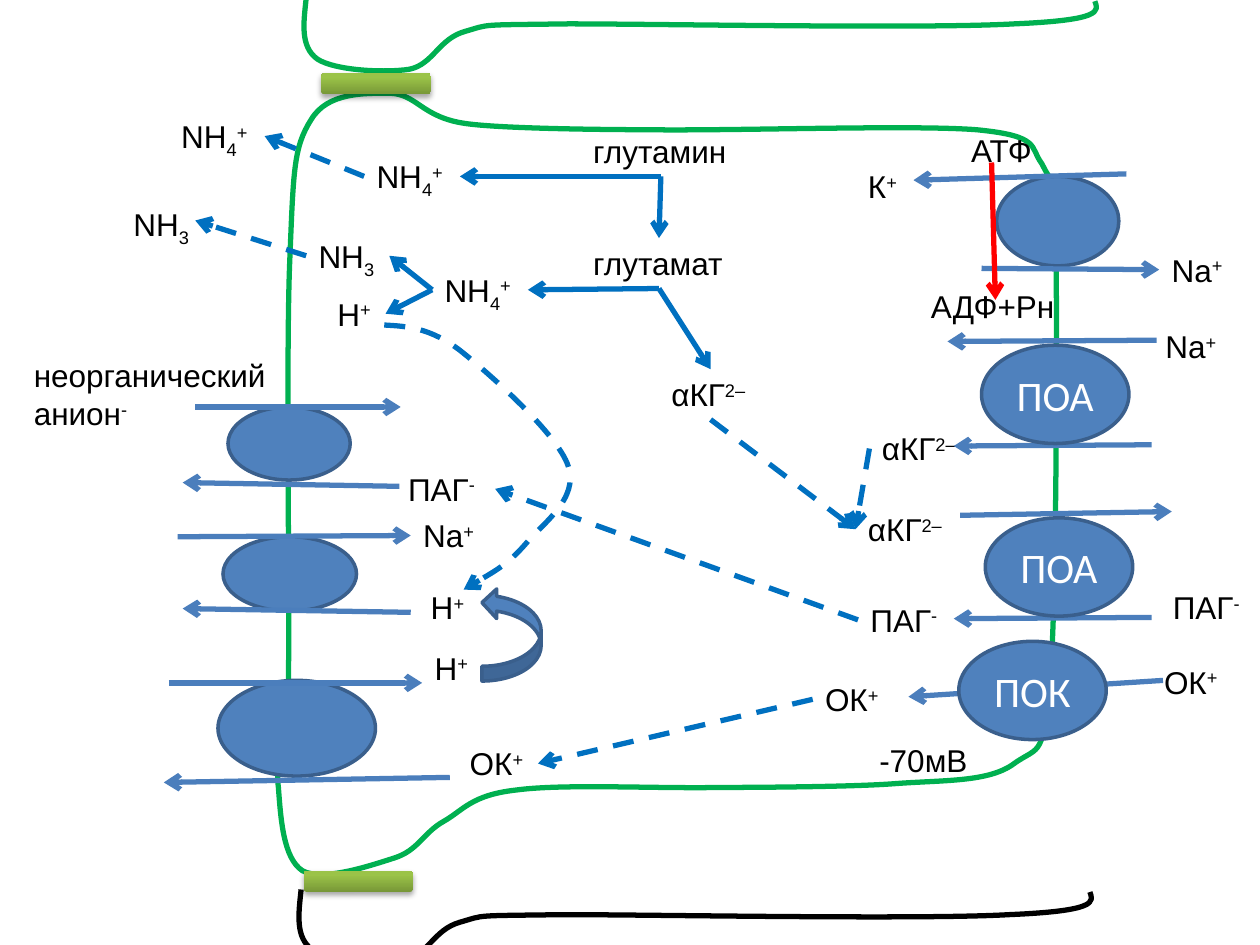
"""Slide: ion and acid transport through a tubule cell."""
from typing import NamedTuple, Optional

from lxml.etree import SubElement
from pptx import Presentation
from pptx.dml.color import RGBColor
from pptx.enum.dml import MSO_LINE
from pptx.enum.shapes import MSO_CONNECTOR, MSO_SHAPE
from pptx.enum.text import MSO_ANCHOR, MSO_AUTO_SIZE, PP_ALIGN
from pptx.oxml.ns import qn
from pptx.util import Pt

PX = 9144
BLACK = RGBColor(0x00, 0x00, 0x00)
WHITE = RGBColor(0xFF, 0xFF, 0xFF)
GREEN = RGBColor(0x00, 0xB0, 0x50)
RED = RGBColor(0xFF, 0x00, 0x00)
BLUE = RGBColor(0x00, 0x70, 0xC0)
FLOW = RGBColor(0x4B, 0x7E, 0xBC)
BODY = RGBColor(0x4F, 0x81, 0xBD)
EDGE = RGBColor(0x3A, 0x5F, 0x8C)
OLIVE = RGBColor(0x77, 0x97, 0x37)
LIME = RGBColor(0x9B, 0xC3, 0x48)
BASELINE = {"^": "30000", "_": "-25000"}


class Label(NamedTuple):
    text: str
    x: int
    y: int
    w: int
    h: int = 40
    wrap: bool = False


class Arrow(NamedTuple):
    x1: int
    y1: int
    x2: int
    y2: int
    color: RGBColor = FLOW
    dash: bool = False


class Carrier(NamedTuple):
    x: int
    y: int
    w: int
    h: int
    text: str = ""


class Curve(NamedTuple):
    points: list
    color: RGBColor = GREEN
    closed: bool = False
    arrow: bool = False


CELL = [(229, 537), (230, 468), (227, 282), (230, 208), (233, 135), (233, 117), (247, 95),
        (260, 73), (290, 74), (310, 74), (331, 75), (335, 93), (369, 98), (403, 103),
        (514, 103), (514, 103), (582, 104), (723, 99), (775, 103), (827, 108), (817, 117),
        (827, 130), (845, 167), (837, 113), (838, 180), (839, 247), (839, 462), (834, 533),
        (828, 604), (826, 591), (805, 606), (785, 621), (749, 619), (710, 622), (671, 625),
        (571, 625), (571, 625), (521, 626), (447, 622), (410, 627), (374, 631), (368, 643),
        (352, 652), (336, 661), (332, 675), (313, 681), (294, 687), (256, 700), (240, 691),
        (225, 681), (223, 651), (221, 625), (218, 599), (227, 607), (229, 537)]
NEIGHBOUR = [(243, -1), (241, 18), (238, 37), (252, 47), (266, 56), (305, 58), (325, 55),
             (344, 51), (348, 31), (369, 25), (390, 19), (378, 20), (451, 19), (523, 19),
             (735, 23), (805, 19), (875, 16), (872, 9), (869, 1)]
LOWER_NEIGHBOUR = [(x - 4, y + 707) for x, y in NEIGHBOUR]
PROTON_PATH = [(305, 258), (323, 259), (341, 260), (365, 278), (389, 297), (443, 345),
               (451, 370), (460, 396), (430, 416), (417, 432), (403, 448), (385, 458), (368, 468)]
CURVES = [Curve(CELL, closed=True), Curve(NEIGHBOUR), Curve(LOWER_NEIGHBOUR, BLACK)]
JUNCTIONS = [(255, 58), (241, 691)]
CARRIERS = [Carrier(791, 140, 97, 71), Carrier(177, 426, 106, 59),
            Carrier(173, 540, 125, 76), Carrier(181, 323, 97, 58)]
NAMED_CARRIERS = [Carrier(761, 509, 117, 78, "ПОК"), Carrier(782, 411, 117, 78, "ПОА"),
                  Carrier(779, 274, 117, 78, "ПОА")]
LABELS = [
    Label("Na|^+", 920, 194, 62), Label("К|^+", 679, 128, 45), Label("АТФ", 761, 99, 69),
    Label("АДФ+Рн", 729, 223, 119), Label("неорганический\nанион|^-", 17, 278, 217, 71),
    Label("Н|^+", 335, 510, 48), Label("Na|^+", 326, 405, 90, wrap=True),
    Label("NН|_4|^+", 289, 120, 76), Label("глутамин", 461, 100, 127),
    Label("ПАГ|^-", 921, 462, 79, wrap=True), Label("αКГ|^2–", 679, 400, 82),
    Label("ОК|^+", 914, 521, 64), Label("-70мВ", 688, 583, 91), Label("αКГ|^2–", 690, 336, 82),
    Label("Na|^+", 915, 255, 62), Label("ОК|^+", 645, 535, 64), Label("ОК|^+", 363, 586, 64),
    Label("Н|^+", 332, 462, 48), Label("ПАГ|^-", 681, 472, 79, wrap=True),
    Label("ПАГ|^-", 314, 368, 79, wrap=True), Label("глутамат", 461, 189, 124),
    Label("NН|_4|^+", 134, 88, 76), Label("αКГ|^2–", 523, 293, 82),
    Label("NН|_4|^+", 343, 210, 76), Label("NН|_3", 243, 183, 66),
    Label("Н|^+", 258, 229, 48), Label("NН|_3", 96, 158, 66)]
ARROWS = [
    Arrow(894, 138, 725, 143), Arrow(779, 213, 920, 214), Arrow(787, 129, 790, 238, RED),
    Arrow(326, 486, 145, 483), Arrow(141, 426, 328, 426), Arrow(357, 617, 130, 621),
    Arrow(134, 542, 335, 542), Arrow(317, 386, 145, 383), Arrow(155, 323, 318, 323),
    Arrow(914, 490, 757, 491), Arrow(762, 409, 930, 406), Arrow(923, 540, 721, 553),
    Arrow(914, 353, 757, 354), Arrow(918, 270, 752, 271),
    Arrow(524, 140, 523, 189, BLUE), Arrow(524, 140, 364, 140, BLUE),
    Arrow(523, 230, 564, 293, BLUE), Arrow(523, 230, 419, 230, BLUE),
    Arrow(343, 230, 309, 203, BLUE), Arrow(343, 230, 306, 250, BLUE),
    Arrow(690, 356, 679, 420, BLUE, True), Arrow(645, 555, 428, 606, BLUE, True),
    Arrow(681, 492, 393, 388, BLUE, True), Arrow(289, 140, 210, 108, BLUE, True),
    Arrow(564, 334, 679, 420, BLUE, True), Arrow(243, 203, 155, 175, BLUE, True)]


def write(tf, text: str, *, font="Arial", size=18, color=BLACK, align=PP_ALIGN.LEFT) -> None:
    """Write lines of runs split by |, where ^ raises and _ lowers a run."""
    for i, line in enumerate(text.split("\n")):
        p = tf.add_paragraph() if i else tf.paragraphs[0]
        p.alignment = align
        for part in line.split("|"):
            r = p.add_run()
            r.text = part.lstrip("^_")
            r.font.name, r.font.size, r.font.color.rgb = font, Pt(size), color
            if part[0] in BASELINE:
                r.font._element.set("baseline", BASELINE[part[0]])


def style_line(sp, color: RGBColor, dash=False, arrow=False) -> None:
    """Format a three-point stroke."""
    sp.line.color.rgb, sp.line.width = color, Pt(3)
    if dash:
        sp.line.dash_style = MSO_LINE.DASH
    if arrow:
        ln = sp.element.spPr.find(qn("a:ln"))
        SubElement(ln, qn("a:tailEnd"), type="arrow")


def draw_curve(s, curve: Curve) -> None:
    """Draw a chain of cubic curves given as a start and point triples."""
    anchors = curve.points[::3]
    builder = s.shapes.build_freeform(*anchors[0], scale=PX)
    builder.add_line_segments(anchors[1:], close=curve.closed)
    sp = builder.convert_to_shape()
    left, top = (min(axis) for axis in zip(*anchors))
    segments = list(sp.element.iter(qn("a:lnTo")))
    for i, segment in enumerate(segments[:len(anchors) - 1]):
        path = segment.getparent()
        cubic = SubElement(path, qn("a:cubicBezTo"))
        for x, y in curve.points[3 * i + 1:3 * i + 4]:
            SubElement(cubic, qn("a:pt"), x=str(x - left), y=str(y - top))
        path.replace(segment, cubic)
    sp.shadow.inherit = False
    sp.fill.background()
    style_line(sp, curve.color, curve.arrow, curve.arrow)


def draw_junction(s, x: int, y: int) -> None:
    """Draw a tight junction bar with a soft shadow."""
    sp = s.shapes.add_shape(MSO_SHAPE.ROUNDED_RECTANGLE, x * PX, y * PX, 87 * PX, 17 * PX)
    sp.fill.gradient()
    sp.fill.gradient_angle = 90
    for stop, color, position in zip(sp.fill.gradient_stops, (OLIVE, LIME), (0, 0.8)):
        stop.color.rgb, stop.position = color, position
    sp.line.fill.background()
    sp.shadow.inherit = False
    effects = sp.element.spPr.find(qn("a:effectLst"))
    shadow = SubElement(effects, qn("a:outerShdw"), blurRad="40000", dist="23000",
                        dir="5400000", rotWithShape="0")
    tint = SubElement(shadow, qn("a:srgbClr"), val=str(BLACK))
    SubElement(tint, qn("a:alpha"), val="35000")


def draw_carrier(s, c: Carrier, kind=MSO_SHAPE.OVAL, rotation=0) -> None:
    """Draw a blue carrier shape with an optional name."""
    sp = s.shapes.add_shape(kind, *(v * PX for v in c[:4]))
    sp.rotation = rotation
    sp.shadow.inherit = False
    sp.fill.solid()
    sp.fill.fore_color.rgb = BODY
    sp.line.color.rgb, sp.line.width = EDGE, Pt(2)
    if c.text:
        sp.text_frame.vertical_anchor = MSO_ANCHOR.MIDDLE
        write(sp.text_frame, c.text, font="Calibri", size=24, color=WHITE, align=PP_ALIGN.CENTER)


def draw_label(s, label: Label):
    """Draw a substance label and return its text box."""
    sp = s.shapes.add_textbox(*(v * PX for v in label[1:5]))
    tf = sp.text_frame
    tf.word_wrap = label.wrap
    tf.auto_size = MSO_AUTO_SIZE.SHAPE_TO_FIT_TEXT
    write(tf, label.text)
    return sp


def find_site(boxes: list, x: int, y: int) -> Optional[tuple]:
    """Return the box and side whose middle lies at the point."""
    for sp in boxes:
        cx, cy = sp.left + sp.width // 2, sp.top + sp.height // 2
        sides = [(cx, sp.top), (sp.left, cy), (cx, sp.top + sp.height), (sp.left + sp.width, cy)]
        for i, (sx, sy) in enumerate(sides):
            if max(abs(sx - x * PX), abs(sy - y * PX)) <= 2 * PX:
                return sp, i
    return None


def draw_arrow(s, a: Arrow, boxes: list) -> None:
    """Draw an arrow and join it to any label side that it meets."""
    line = s.shapes.add_connector(MSO_CONNECTOR.STRAIGHT, *(v * PX for v in a[:4]))
    style_line(line, a.color, a.dash, True)
    SubElement(line.element.spPr, qn("a:effectLst"))
    start, end = find_site(boxes, a.x1, a.y1), find_site(boxes, a.x2, a.y2)
    if start:
        line.begin_connect(*start)
    if end:
        line.end_connect(*end)


def main() -> None:
    """Build and save the slide."""
    prs = Presentation()
    prs.slide_width, prs.slide_height = 1000 * PX, 750 * PX
    s = prs.slides.add_slide(prs.slide_layouts[6])
    for curve in CURVES:
        draw_curve(s, curve)
    for x, y in JUNCTIONS:
        draw_junction(s, x, y)
    for carrier in CARRIERS:
        draw_carrier(s, carrier)
    boxes = [draw_label(s, label) for label in LABELS]
    for arrow in ARROWS:
        draw_arrow(s, arrow, boxes)
    for carrier in NAMED_CARRIERS:
        draw_carrier(s, carrier)
    draw_carrier(s, Carrier(369, 480, 74, 47), MSO_SHAPE.CURVED_UP_ARROW, 270)
    draw_curve(s, Curve(PROTON_PATH, BLUE, arrow=True))
    prs.save("out.pptx")


if __name__ == "__main__":
    main()
